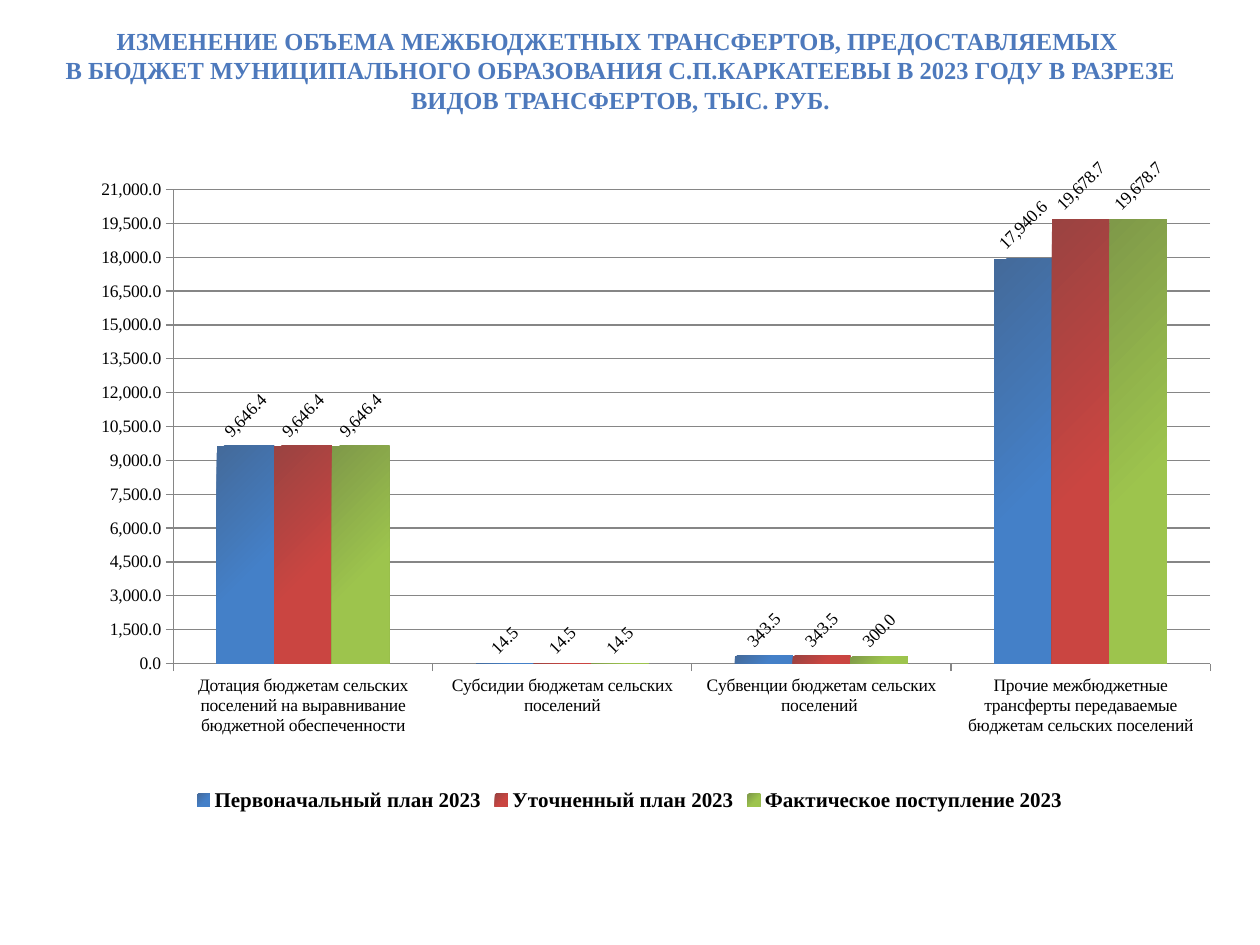
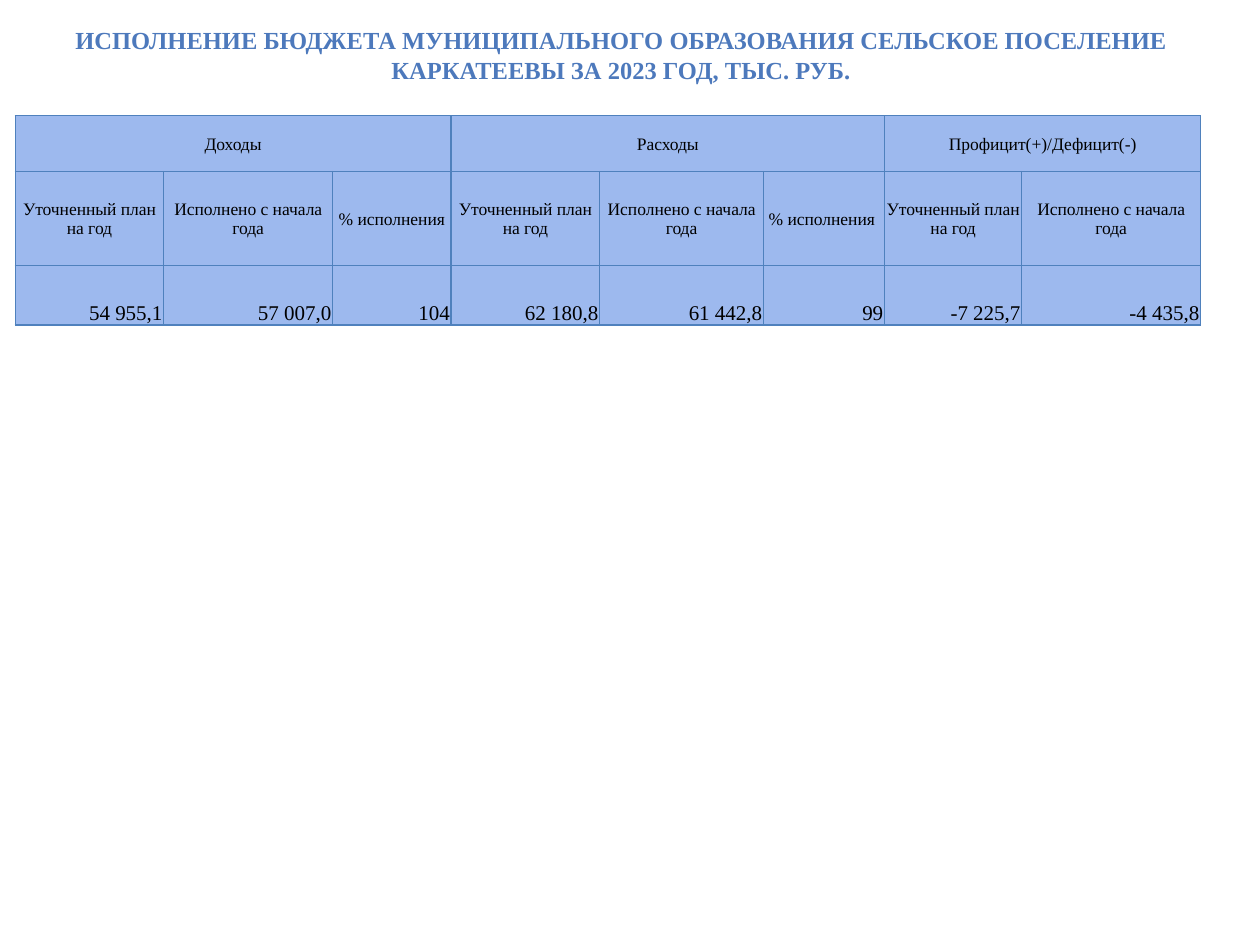
from lxml.etree import SubElement
from pptx import Presentation
from pptx.chart.data import CategoryChartData
from pptx.dml.color import RGBColor
from pptx.enum.chart import XL_CHART_TYPE as ChartType
from pptx.enum.chart import XL_LABEL_POSITION as LabelPosition
from pptx.enum.chart import XL_LEGEND_POSITION as LegendPosition
from pptx.enum.chart import XL_TICK_MARK as TickMark
from pptx.enum.text import MSO_ANCHOR as Anchor
from pptx.enum.text import PP_ALIGN as Align
from pptx.oxml import parse_xml
from pptx.oxml.ns import nsdecls, qn
from pptx.util import Inches, Pt

FONT = "Times New Roman"
TITLE_COLOR = "4D79BC"
TEXT_COLOR = "000000"
GRID_COLOR = "868686"
CELL_FILL = "9DB9EE"
CELL_BORDER = "4F81BD"
NUMBER_FORMAT = "#,##0.0"

# Transfers by kind
CATEGORIES = [
    "Дотация бюджетам сельских поселений на выравнивание бюджетной обеспеченности",
    "Субсидии бюджетам сельских поселений",
    "Субвенции бюджетам сельских поселений ",
    "Прочие межбюджетные трансферты передаваемые бюджетам сельских поселений",
]
# Name, values, dark and bright ends of the column gradient
SERIES = [
    ("Первоначальный план 2023", (9646.4, 14.5, 343.5, 17940.6), "446A9A", "4480C8"),
    ("Уточненный план 2023", (9646.4, 14.5, 343.5, 19678.7), "9A4341", "CA4541"),
    ("Фактическое поступление 2023", (9646.4, 14.5, 300, 19678.7), "7F9949", "9DC44D"),
]

# Budget execution
COLUMN_WIDTHS = [1.18, 1.34, 0.94, 1.18, 1.3, 0.96, 1.09, 1.42]
ROW_HEIGHTS = [0.44, 0.75, 0.47]
GROUPS = [("Доходы", 3), ("Расходы", 3), ("Профицит(+)/Дефицит(-)", 2)]
PLAN, DONE = "Уточненный план на год", "Исполнено с начала года"
HEADINGS = [PLAN, DONE, "% исполнения", PLAN, DONE, "% исполнения ", PLAN, DONE]
AMOUNTS = ["54 955,1", "57 007,0", "104", "62 180,8", "61 442,8", "99",
           "-7 225,7", "-4 435,8"]


def color(value):
    return RGBColor.from_string(value)


def set_font(font, size, bold=False, tint=TEXT_COLOR):
    font.name = FONT
    font.size = Pt(size)
    font.bold = bold
    font.color.rgb = color(tint)


def add_page(deck, title, left, width, height):
    """Add a slide with a centred blue title."""
    page = deck.slides.add_slide(deck.slide_layouts[5])
    box = page.shapes.title
    box.left, box.top = Inches(left), Inches(0.13)
    box.width, box.height = Inches(width), Inches(height)
    frame = box.text_frame
    frame.text = title
    frame.vertical_anchor = Anchor.MIDDLE
    frame.margin_left = frame.margin_right = Inches(0.11)
    frame.margin_top = frame.margin_bottom = Inches(0.06)
    para = frame.paragraphs[0]
    para.alignment = Align.CENTER
    for span in para.runs:
        set_font(span.font, 14, True, TITLE_COLOR)
    return page


def place_plot(chart, **fractions):
    """Fix the inner plot area as fractions of the chart."""
    area = chart._chartSpace.chart.plotArea
    for old in area.findall(qn("c:layout")):
        area.remove(old)
    layout = parse_xml(f"<c:layout {nsdecls('c')}><c:manualLayout/></c:layout>")
    manual = layout[0]
    SubElement(manual, qn("c:layoutTarget")).set("val", "inner")
    for name in ("xMode", "yMode"):
        SubElement(manual, qn(f"c:{name}")).set("val", "edge")
    for name, value in fractions.items():
        SubElement(manual, qn(f"c:{name}")).set("val", str(value))
    area.insert(0, layout)


def style_axis(axis):
    axis.major_tick_mark = TickMark.OUTSIDE
    axis.minor_tick_mark = TickMark.NONE
    axis.format.line.color.rgb = color(GRID_COLOR)
    set_font(axis.tick_labels.font, 10)


def style_series(series, dark, bright):
    """Gradient columns with slanted value labels."""
    fill = series.format.fill
    fill.gradient()
    fill.gradient_angle = 315
    for stop, tint, position in zip(fill.gradient_stops, (dark, bright), (0, 0.6)):
        stop.color.rgb = color(tint)
        stop.position = position
    labels = series.data_labels
    labels.show_value = True
    labels.number_format = NUMBER_FORMAT
    labels.number_format_is_linked = False
    labels.position = LabelPosition.OUTSIDE_END
    set_font(labels.font, 10)
    body = labels._element.find(qn("c:txPr")).find(qn("a:bodyPr"))
    body.set("rot", "-2700000")
    body.set("vert", "horz")


def add_transfer_chart(page):
    data = CategoryChartData(number_format=NUMBER_FORMAT)
    data.categories = CATEGORIES
    for name, values, _, _ in SERIES:
        data.add_series(name, values)
    chart = page.shapes.add_chart(
        ChartType.COLUMN_CLUSTERED, Inches(0.39), Inches(1.09),
        Inches(9.22), Inches(5.39), data).chart
    set_font(chart.font, 10)
    chart.has_title = False
    place_plot(chart, x=0.107, y=0.077, w=0.893, h=0.698)

    chart.has_legend = True
    chart.legend.position = LegendPosition.BOTTOM
    chart.legend.include_in_layout = False
    set_font(chart.legend.font, 12, True)

    style_axis(chart.category_axis)
    values_axis = chart.value_axis
    style_axis(values_axis)
    values_axis.minimum_scale = 0
    values_axis.maximum_scale = 21000
    values_axis.major_unit = 1500
    values_axis.has_major_gridlines = True
    values_axis.major_gridlines.format.line.color.rgb = color(GRID_COLOR)
    values_axis.tick_labels.number_format = NUMBER_FORMAT
    values_axis.tick_labels.number_format_is_linked = False

    plot = chart.plots[0]
    plot.gap_width = 150
    plot.vary_by_categories = False
    for series, (_, _, dark, bright) in zip(plot.series, SERIES):
        style_series(series, dark, bright)


def style_cell(cell):
    """Fill, border and margins of a table cell."""
    properties = cell._tc.get_or_add_tcPr()
    for side in "LRTB":
        properties.append(parse_xml(
            f'<a:ln{side} {nsdecls("a")} w="{Pt(0.75)}"><a:solidFill>'
            f'<a:srgbClr val="{CELL_BORDER}"/></a:solidFill></a:ln{side}>'))
    cell.fill.solid()
    cell.fill.fore_color.rgb = color(CELL_FILL)
    cell.margin_left = cell.margin_right = cell.margin_top = Inches(0.01)
    cell.margin_bottom = 0


def write_cell(cell, text, size=10, align=Align.CENTER, anchor=Anchor.MIDDLE):
    cell.text_frame.text = text
    cell.vertical_anchor = anchor
    para = cell.text_frame.paragraphs[0]
    para.alignment = align
    set_font(para.runs[0].font, size)


def add_budget_table(page):
    table = page.shapes.add_table(
        len(ROW_HEIGHTS), len(COLUMN_WIDTHS), Inches(0.12), Inches(0.92),
        Inches(sum(COLUMN_WIDTHS)), Inches(sum(ROW_HEIGHTS))).table
    for column, width in zip(table.columns, COLUMN_WIDTHS):
        column.width = Inches(width)
    for row, height in zip(table.rows, ROW_HEIGHTS):
        row.height = Inches(height)
    for cell in table.iter_cells():
        style_cell(cell)

    # Group headings span their columns
    start = 0
    for name, span in GROUPS:
        cell = table.cell(0, start)
        cell.merge(table.cell(0, start + span - 1))
        write_cell(cell, name)
        start += span
    for column, (heading, amount) in enumerate(zip(HEADINGS, AMOUNTS)):
        write_cell(table.cell(1, column), heading)
        write_cell(table.cell(2, column), amount, 12, Align.RIGHT, Anchor.BOTTOM)


def main():
    deck = Presentation()
    deck.slide_width, deck.slide_height = Inches(10), Inches(7.5)

    # Transfers chart
    page = add_page(
        deck,
        "ИЗМЕНЕНИЕ ОБЪЕМА МЕЖБЮДЖЕТНЫХ ТРАНСФЕРТОВ, ПРЕДОСТАВЛЯЕМЫХ \v"
        "В БЮДЖЕТ МУНИЦИПАЛЬНОГО ОБРАЗОВАНИЯ С.П.КАРКАТЕЕВЫ В 2023 ГОДУ "
        "В РАЗРЕЗЕ ВИДОВ ТРАНСФЕРТОВ, ТЫС. РУБ.",
        0.12, 9.61, 0.85)
    add_transfer_chart(page)

    # Budget table
    page = add_page(
        deck,
        "ИСПОЛНЕНИЕ БЮДЖЕТА МУНИЦИПАЛЬНОГО ОБРАЗОВАНИЯ СЕЛЬСКОЕ ПОСЕЛЕНИЕ "
        "КАРКАТЕЕВЫ ЗА 2023 ГОД, ТЫС. РУБ.",
        0.43, 9, 0.61)
    add_budget_table(page)

    deck.save("out.pptx")


if __name__ == "__main__":
    main()
